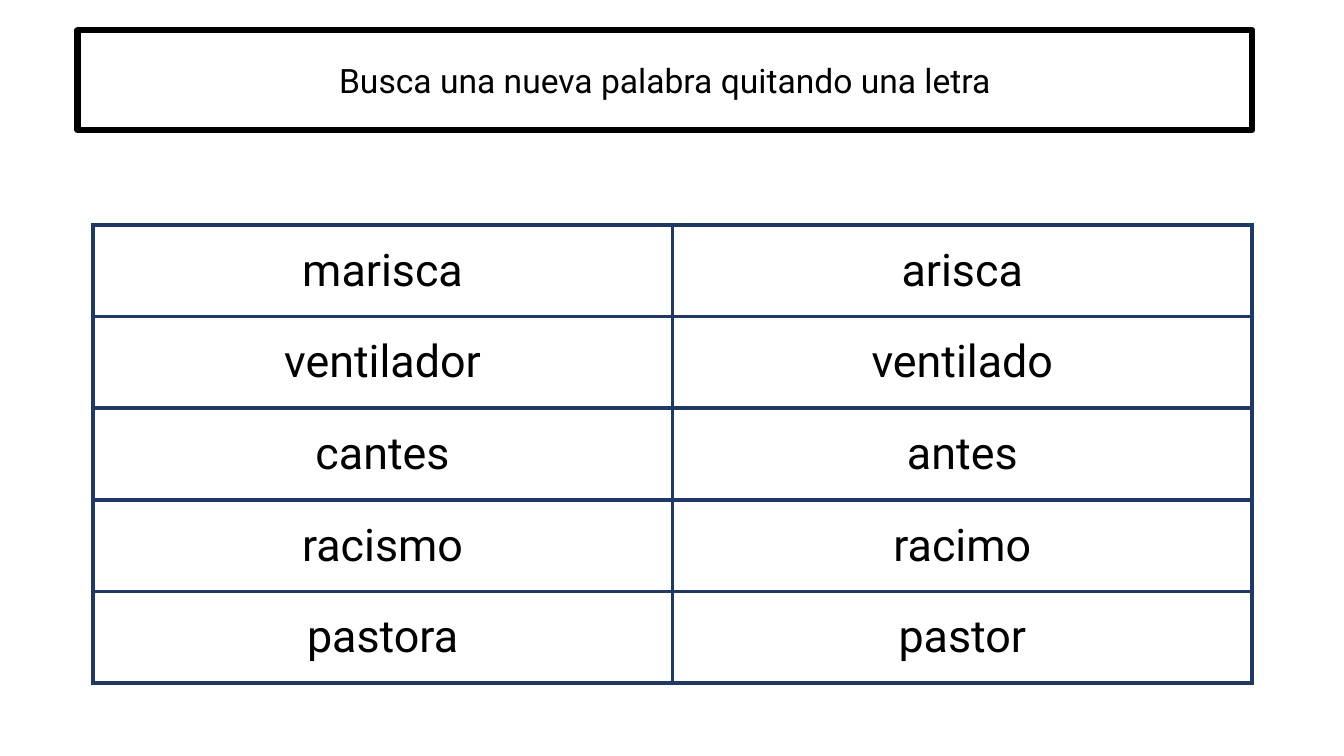
from typing import NamedTuple

from lxml import etree
from pptx import Presentation
from pptx import util as u
from pptx.dml.color import RGBColor
from pptx.enum import text
from pptx.oxml.ns import qn

EMU_PER_PX = 9144  # 100 px to the inch
BLACK = RGBColor(0x00, 0x00, 0x00)
WHITE = RGBColor(0xFF, 0xFF, 0xFF)
NAVY = RGBColor(0x20, 0x38, 0x64)
FONT = "Roboto"
INSTRUCTION = "Busca una nueva palabra quitando una letra"


class WordPair(NamedTuple):
    word: str
    shorter: str


PAIRS = [
    WordPair("marisca", "arisca"),
    WordPair("ventilador", "ventilado"),
    WordPair("cantes", "antes"),
    WordPair("racismo", "racimo"),
    WordPair("pastora", "pastor"),
]
COLUMN_WIDTH, ROW_HEIGHT = 575, 91


def px(length: int) -> u.Emu:
    return u.Emu(length * EMU_PER_PX)


def write_centred(frame, wording: str, size: int) -> None:
    frame.text = wording
    paragraph = frame.paragraphs[0]
    paragraph.alignment = text.PP_ALIGN.CENTER
    font = paragraph.runs[0].font
    for attribute, value in {"name": FONT, "size": u.Pt(size)}.items():
        setattr(font, attribute, value)
    font.color.rgb = BLACK


def frame_title(title) -> None:
    """Turn the title placeholder into the rounded instruction box."""
    place = {"left": 77, "top": 30, "width": 1165, "height": 99}
    for attribute, length in place.items():
        setattr(title, attribute, px(length))
    outline = etree.SubElement(title.element.spPr, qn("a:prstGeom"), prst="roundRect")
    etree.SubElement(outline, qn("a:avLst"))
    title.fill.solid()
    title.fill.fore_color.rgb = WHITE
    title.line.color.rgb = BLACK
    title.line.width = u.Pt(4.5)
    write_centred(title.text_frame, INSTRUCTION, 24)
    title.text_frame.auto_size = text.MSO_AUTO_SIZE.NONE
    title.text_frame.vertical_anchor = text.MSO_ANCHOR.MIDDLE


def add_borders(cell, color: RGBColor, width: u.Pt) -> None:
    properties = cell._tc.get_or_add_tcPr()
    for side in ("lnL", "lnR", "lnT", "lnB"):
        border = etree.SubElement(properties, qn(f"a:{side}"), w=str(int(width)))
        fill = etree.SubElement(border, qn("a:solidFill"))
        etree.SubElement(fill, qn("a:srgbClr"), val=str(color))


def add_word_table(slide, pairs: list[WordPair]) -> None:
    columns = len(WordPair._fields)
    words = slide.shapes.add_table(
        len(pairs), columns, px(92), px(223),
        px(COLUMN_WIDTH * columns), px(ROW_HEIGHT * len(pairs)),
    ).table
    words.first_row = words.horz_banding = False
    for row, pair in enumerate(pairs):
        for column, word in enumerate(pair):
            cell = words.cell(row, column)
            add_borders(cell, NAVY, u.Pt(3))
            cell.fill.solid()
            cell.fill.fore_color.rgb = WHITE
            cell.vertical_anchor = text.MSO_ANCHOR.MIDDLE
            write_centred(cell.text_frame, word, 32)


def main() -> None:
    deck = Presentation()
    deck.slide_width, deck.slide_height = u.Inches(13.33), u.Inches(7.5)
    slide = deck.slides.add_slide(deck.slide_layouts.get_by_name("Title Only"))
    frame_title(slide.shapes.title)
    add_word_table(slide, PAIRS)
    deck.save("out.pptx")


if __name__ == "__main__":
    main()
